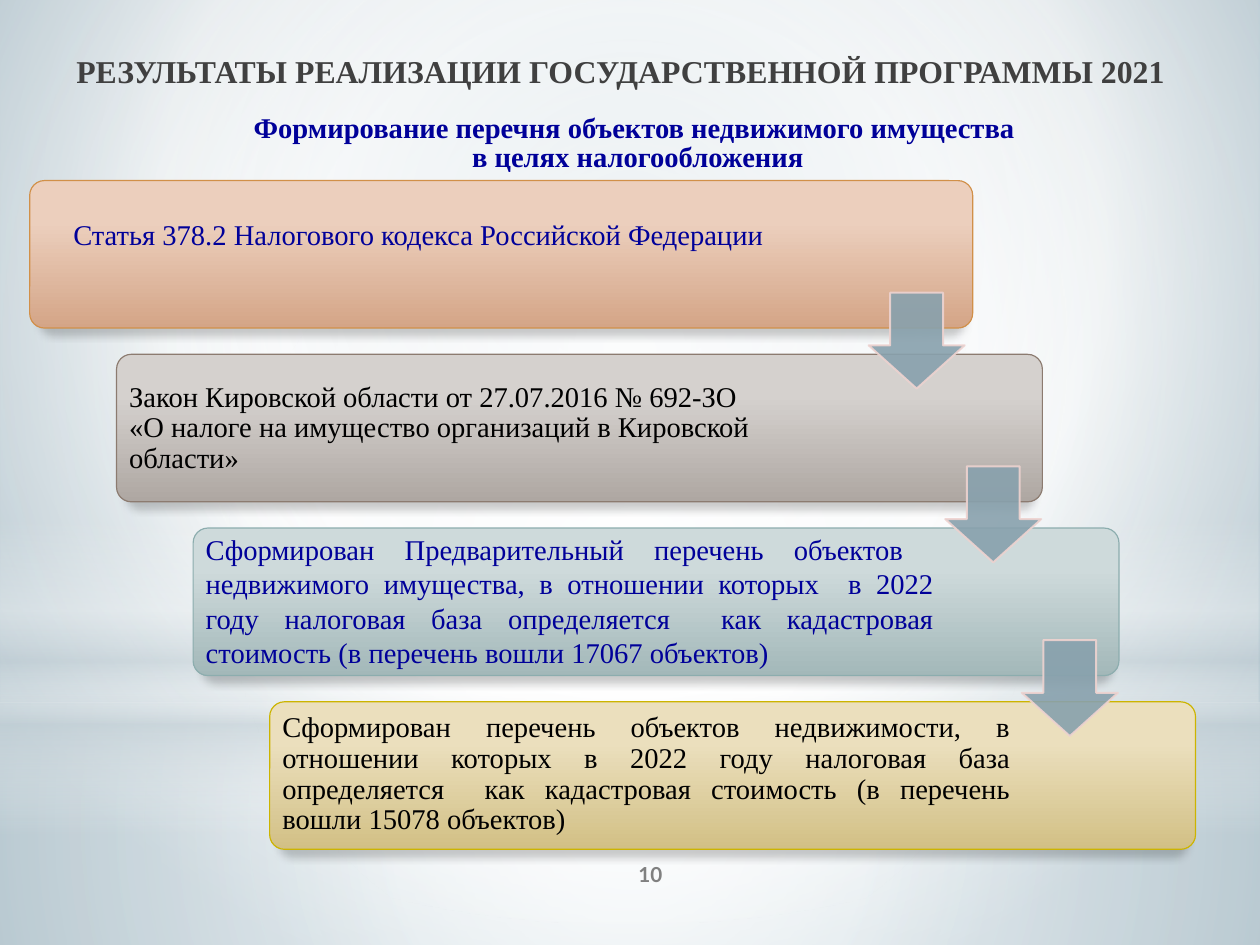
from dataclasses import dataclass

from lxml.etree import SubElement
from pptx import Presentation
from pptx.dml.color import RGBColor
from pptx.enum.shapes import MSO_SHAPE as Preset
from pptx.enum.text import MSO_ANCHOR as Anchor, PP_ALIGN as Align
from pptx.oxml import parse_xml
from pptx.oxml.ns import nsdecls, qn
from pptx.util import Inches, Pt

COLORS = {
    "white": "FFFFFF", "mist": "C5D1D7", "sky": "B8CAD3", "steel": "8FAEBD",
    "title": "404040", "number": "808080", "navy": "000099", "black": "000000",
    "arrow": "88A1AD", "arrow_line": "EED3D0",
}
SERIF = "Times New Roman"
WIDTH, HEIGHT = 28 / 2.54, 21 / 2.54
STEP_TOP, STEP_PITCH, STEP_HEIGHT = 1.58, 1.52, 1.29
ARROW_LEFT, ARROW_TOP, ARROW_SHIFT, ARROW_SIZE = 7.6, 2.56, 0.67, 0.84
CENTER = (50, 50, 50, 50)


@dataclass
class Stop:
    place: int
    color: str
    alpha: int = 100


@dataclass
class Layer:
    top: float
    height: float
    stops: list[Stop]
    preset: Preset = Preset.RECTANGLE
    focus: tuple[int, ...] | None = CENTER


@dataclass
class Step:
    left: float
    width: float
    label_width: float
    light: str
    dark: str
    line: str
    text_color: str
    lines: list[str]
    align: Align
    spacings: list[float]
    bottom_inset: float = 0.07


WHITE, MIST = COLORS["white"], COLORS["mist"]
LAYERS = [
    Layer(6.15, 2.11, [Stop(0, WHITE, 91), Stop(37, WHITE, 76), Stop(100, MIST, 79)]),
    Layer(0, 6.15, [Stop(0, WHITE, 89), Stop(48, WHITE, 62), Stop(100, MIST, 79)]),
    Layer(4.54, 2.76, [Stop(0, WHITE, 0), Stop(29, WHITE, 30), Stop(45, MIST, 40),
                       Stop(55, WHITE, 26), Stop(65, MIST, 60), Stop(100, WHITE, 0)],
          focus=None),
    Layer(1.93, 6.15, [Stop(0, WHITE), Stop(56, WHITE, 0)], Preset.OVAL),
]
STEPS = [
    Step(0.26, 8.25, 6.72, "ECCFBD", "D4A587", "D19049", COLORS["navy"],
         ["Статья 378.2 Налогового кодекса Российской Федерации"],
         Align.CENTER, [0.9], 0.37),
    Step(1.02, 8.1, 6.51, "D5D1CE", "AEA7A2", "8C7B70", COLORS["black"],
         ["Закон Кировской области от 27.07.2016 № 692-ЗО",
          "«О налоге на имущество организаций в Кировской области»"],
         Align.LEFT, [1.0, 0.9]),
    Step(1.69, 8.1, 6.51, "CEDADB", "A3B8B9", "8CADAE", COLORS["navy"],
         ["Сформирован Предварительный перечень объектов  недвижимого имущества, "
          "в отношении которых  в 2022 году налоговая база определяется  "
          "как кадастровая стоимость (в перечень вошли 17067 объектов)"],
         Align.JUSTIFY, [1.0]),
    Step(2.36, 8.1, 6.51, "EBDFBD", "D2C085", "CCB400", COLORS["black"],
         ["Сформирован перечень объектов недвижимости, в отношении которых "
          "в 2022 году налоговая база определяется  как кадастровая стоимость "
          "(в перечень вошли 15078 объектов) "],
         Align.JUSTIFY, [0.9]),
]


def gradient(stops: list[Stop], focus: tuple[int, ...] | None = None):
    marks = "".join(
        f'<a:gs pos="{stop.place * 1000}"><a:srgbClr val="{stop.color}">'
        f'<a:alpha val="{stop.alpha * 1000}"/></a:srgbClr></a:gs>' for stop in stops)
    if focus:
        sides = " ".join(f'{side}="{share * 1000}"' for side, share in zip("ltrb", focus))
        shade = f'<a:path path="circle"><a:fillToRect {sides}/></a:path>'
    else:
        shade = '<a:lin ang="5400000" scaled="0"/>'
    return parse_xml(f'<a:gradFill {nsdecls("a")} rotWithShape="1">'
                     f'<a:gsLst>{marks}</a:gsLst>{shade}</a:gradFill>')


def fill_gradient(fill, holder, stops: list[Stop], focus=None) -> None:
    fill.solid()
    holder.replace(holder.find(qn("a:solidFill")), gradient(stops, focus))


def set_alpha(color_parent, percent: int) -> None:
    SubElement(color_parent[0], qn("a:alpha"), val=str(percent * 1000))


def add_block(slide, preset: Preset, left: float, top: float, width: float, height: float):
    block = slide.shapes.add_shape(preset, Inches(left), Inches(top),
                                   Inches(width), Inches(height))
    block.shadow.inherit = False
    return block


def add_text(slide, lines: list[str], left: float, top: float, width: float, height: float, *,
             color: str, size: float = 18, font: str = SERIF, bold: bool = False,
             align: Align = Align.CENTER, anchor: Anchor = Anchor.TOP,
             spacings: list[float] | None = None,
             insets: tuple[float, ...] = (0.11, 0.06, 0.11, 0.06)) -> None:
    box = slide.shapes.add_textbox(Inches(left), Inches(top), Inches(width), Inches(height))
    frame = box.text_frame
    frame.word_wrap = True
    frame.vertical_anchor = anchor
    (frame.margin_left, frame.margin_top,
     frame.margin_right, frame.margin_bottom) = map(Inches, insets)
    for index, (line, spacing) in enumerate(zip(lines, spacings or [1.0] * len(lines))):
        para = frame.add_paragraph() if index else frame.paragraphs[0]
        para.alignment = align
        para.line_spacing = spacing
        span = para.add_run()
        span.text = line
        span.font.name = font
        span.font.size = Pt(size)
        span.font.bold = bold
        span.font.color.rgb = RGBColor.from_string(color)


def add_layer(slide, layer: Layer) -> None:
    block = add_block(slide, layer.preset, 0, layer.top, WIDTH, layer.height)
    fill_gradient(block.fill, block.element.spPr, layer.stops, layer.focus)
    block.line.fill.background()


def add_step(slide, step: Step, top: float) -> None:
    card = add_block(slide, Preset.ROUNDED_RECTANGLE, step.left, top, step.width, STEP_HEIGHT)
    card.adjustments[0] = 0.1
    props = card.element.spPr
    fill_gradient(card.fill, props, [Stop(28, step.light), Stop(100, step.dark)])
    card.line.color.rgb = RGBColor.from_string(step.line)
    card.line.width = Pt(0.75)
    shadow = SubElement(props.find(qn("a:effectLst")), qn("a:outerShdw"), blurRad=str(Pt(5)),
                        dist=str(Pt(4)), dir="5400000", sx="98000", sy="98000",
                        rotWithShape="0")
    SubElement(shadow, qn("a:srgbClr"), val=COLORS["black"])
    set_alpha(shadow, 20)
    add_text(slide, step.lines, step.left + 0.04, top + 0.03, step.label_width, 1.21,
             color=step.text_color, align=step.align, anchor=Anchor.MIDDLE,
             spacings=step.spacings, insets=(0.07, 0.07, 0.07, step.bottom_inset))


def add_arrow(slide, left: float, top: float) -> None:
    arrow = add_block(slide, Preset.DOWN_ARROW, left, top, ARROW_SIZE, ARROW_SIZE)
    arrow.adjustments[0] = 0.55
    arrow.adjustments[1] = 0.45
    arrow.fill.solid()
    arrow.fill.fore_color.rgb = RGBColor.from_string(COLORS["arrow"])
    arrow.line.color.rgb = RGBColor.from_string(COLORS["arrow_line"])
    arrow.line.width = Pt(1.25)
    for solid_fill in arrow.element.spPr.iter(qn("a:solidFill")):
        set_alpha(solid_fill, 90)


def main() -> None:
    deck = Presentation()
    deck.slide_width, deck.slide_height = Inches(WIDTH), Inches(HEIGHT)
    page = deck.slides.add_slide(deck.slide_layouts[6])
    backdrop = page.background.fill
    backdrop.solid()
    fill_gradient(backdrop, page.element.find(".//" + qn("p:bgPr")),
                  [Stop(0, COLORS["sky"]), Stop(60, WHITE), Stop(100, COLORS["steel"])],
                  (20, 10, 20, 60))
    for layer in LAYERS:
        add_layer(page, layer)
    add_text(page, ["РЕЗУЛЬТАТЫ РЕАЛИЗАЦИИ ГОСУДАРСТВЕННОЙ ПРОГРАММЫ 2021"],
             0.5, 0.39, 9.86, 0.67, color=COLORS["title"], size=20, bold=True)
    add_text(page, ["10"], 4.59, 7.43, 2.2, 0.44, color=COLORS["number"], size=13,
             font="Lato", bold=True, anchor=Anchor.MIDDLE)
    add_text(page, ["Формирование перечня объектов недвижимого имущества ",
                    "в целях налогообложения"],
             0.73, 0.95, 9.7, 0.63, color=COLORS["navy"], bold=True,
             spacings=[0.87, 0.87], insets=(0.1, 0.05, 0.1, 0.05))
    for index, step in enumerate(STEPS):
        add_step(page, step, STEP_TOP + index * STEP_PITCH)
    for index in range(len(STEPS) - 1):
        add_arrow(page, ARROW_LEFT + index * ARROW_SHIFT, ARROW_TOP + index * STEP_PITCH)
    deck.save("out.pptx")


if __name__ == "__main__":
    main()
